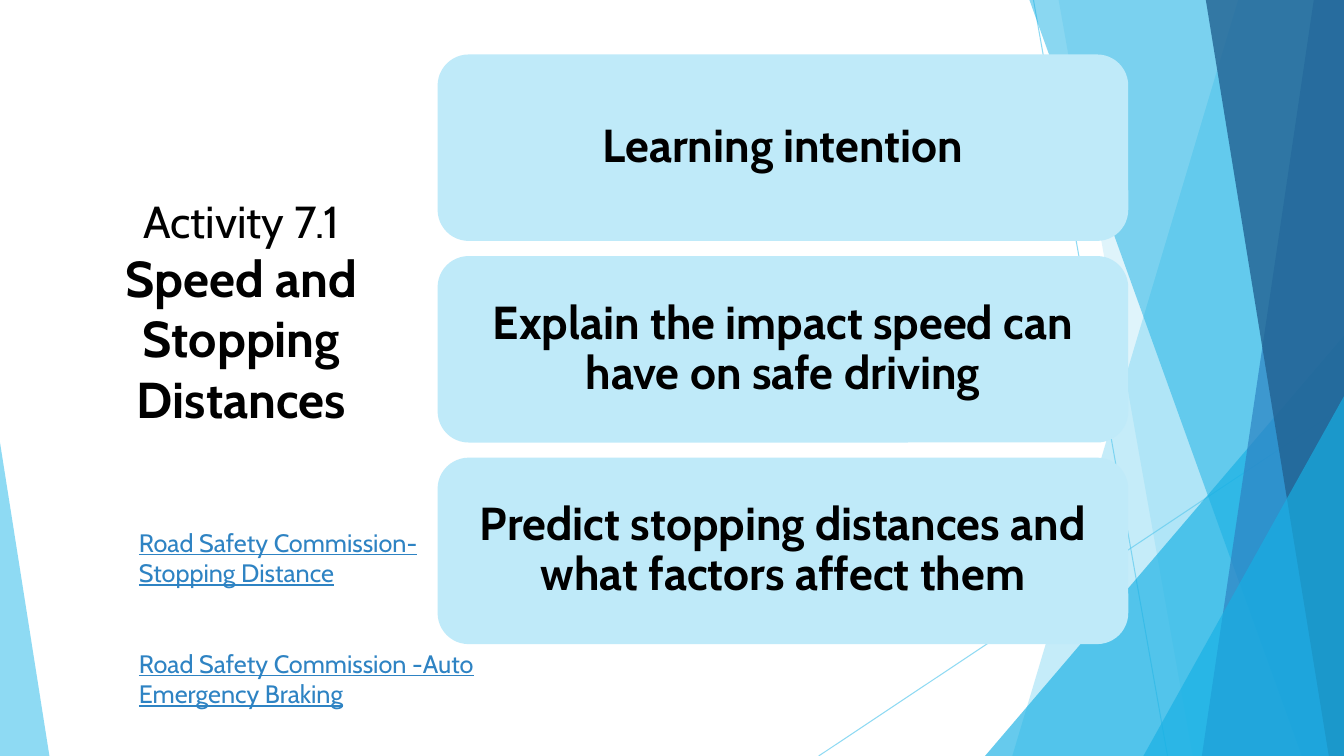
import pptx
import pptx.util
import pptx.dml.color
import pptx.enum.shapes
import pptx.enum.text
import pptx.oxml.ns
import pptx.oxml.xmlchemy

Inches, Pt = pptx.util.Inches, pptx.util.Pt
Kind = pptx.enum.shapes.MSO_SHAPE
Align = pptx.enum.text.PP_ALIGN
Anchor = pptx.enum.text.MSO_ANCHOR
qn = pptx.oxml.ns.qn
Element = pptx.oxml.xmlchemy.OxmlElement


def tint(fill, hue, shape=None, alpha=100):
    """Set a solid colour; with a shape, also its opacity in percent."""
    fill.solid()
    fill.fore_color.rgb = pptx.dml.color.RGBColor.from_string(hue)
    if shape is not None:
        color = next(shape.element.spPr.iter(qn("a:srgbClr")))
        node = Element("a:alpha")
        node.set("val", str(alpha * 1000))
        color.append(node)


def style(para, text, size, hue="000000", bold=False, align=Align.CENTER):
    para.text = text
    para.alignment = align
    para.font.name = "Cabin"
    para.font.size = Pt(size)
    para.font.bold = bold
    tint(para.font.fill, hue)


deck = pptx.Presentation()
deck.slide_width, deck.slide_height = Inches(13.33), Inches(7.5)
slide = deck.slides.add_slide(deck.slide_layouts[6])
shapes = slide.shapes

# Thin lines behind the facets
for x1, y1, x2, y2 in [(10.25, 0, 11.58, 7.5), (13.33, 4.03, 8.12, 7.5)]:
    line = shapes.add_connector(
        pptx.enum.shapes.MSO_CONNECTOR.STRAIGHT,
        Inches(x1), Inches(y1), Inches(x2), Inches(y2))
    line.line.width = Pt(0.75)
    tint(line.line.fill, "5FCBEF", line, 70)
    line.element.spPr.append(Element("a:effectLst"))

# Facets: a band has top and bottom x and runs to the right edge;
# a triangle has left, top, width, height and the place of its tip
facets = [
    ("band", (12.28, 10.04), "5FCBEF", 36),
    ("band", (10.5, 11.83), "5FCBEF", 20),
    ("triangle", (9.77, 3.33, 3.56, 4.17, 1), "17B0E4", 66),
    ("band", (10.21, 12.91), "17B0E4", 50),
    ("band", (13.03, 11.92), "2E83C3", 70),
    ("band", (11.96, 13.18), "226292", 80),
    ("triangle", (11.34, 3.93, 1.99, 3.57, 1), "17B0E4", 66),
    ("triangle", (0, 4.39, 0.49, 3.11, 0), "5FCBEF", 70),
]
for form, place, hue, alpha in facets:
    if form == "band":
        top, base = place
        pen = shapes.build_freeform(Inches(top), 0)
        pen.add_line_segments([
            (Inches(13.33), 0), (Inches(13.33), Inches(7.5)),
            (Inches(base), Inches(7.5))])
        facet = pen.convert_to_shape()
    else:
        *box, tip = place
        facet = shapes.add_shape(
            Kind.ISOSCELES_TRIANGLE, *[Inches(n) for n in box])
        facet.adjustments[0] = tip
    facet.shadow.inherit = False
    facet.line.fill.background()
    tint(facet.fill, hue, facet, alpha)

# Title, set a little above the middle
title = shapes.add_textbox(
    Inches(0.44), Inches(0.92), Inches(3.91), Inches(4.88))
frame = title.text_frame
frame.word_wrap = True
frame.vertical_anchor = Anchor.MIDDLE
frame.margin_bottom = Inches(0.6)
style(frame.paragraphs[0], "Activity 7.1", 32)
style(frame.add_paragraph(), "Speed and Stopping Distances", 36, bold=True)

# Cards
cards = [
    "Learning intention",
    "Explain the impact speed can have on safe driving",
    "Predict stopping distances and what factors affect them",
]
for row, text in enumerate(cards):
    card = shapes.add_shape(
        Kind.ROUNDED_RECTANGLE, Inches(4.34), Inches(0.54 + 2 * row),
        Inches(6.85), Inches(1.85))
    card.shadow.inherit = False
    card.line.fill.background()
    tint(card.fill, "BFEAF9")
    frame = card.text_frame
    frame.word_wrap = True
    frame.vertical_anchor = Anchor.MIDDLE
    style(frame.paragraphs[0], text, 33, bold=True)
    frame.paragraphs[0].line_spacing = 0.9

# Underlined references
notes = [
    (5.18, 3.24, "Road Safety Commission- Stopping Distance"),
    (6.38, 3.94, "Road Safety Commission -Auto Emergency Braking"),
]
for top, width, text in notes:
    note = shapes.add_textbox(
        Inches(1.28), Inches(top), Inches(width), Inches(0.71))
    note.text_frame.word_wrap = True
    para = note.text_frame.paragraphs[0]
    style(para, text, 18, "2E83C3", align=Align.LEFT)
    para.font.underline = True

deck.save("out.pptx")
